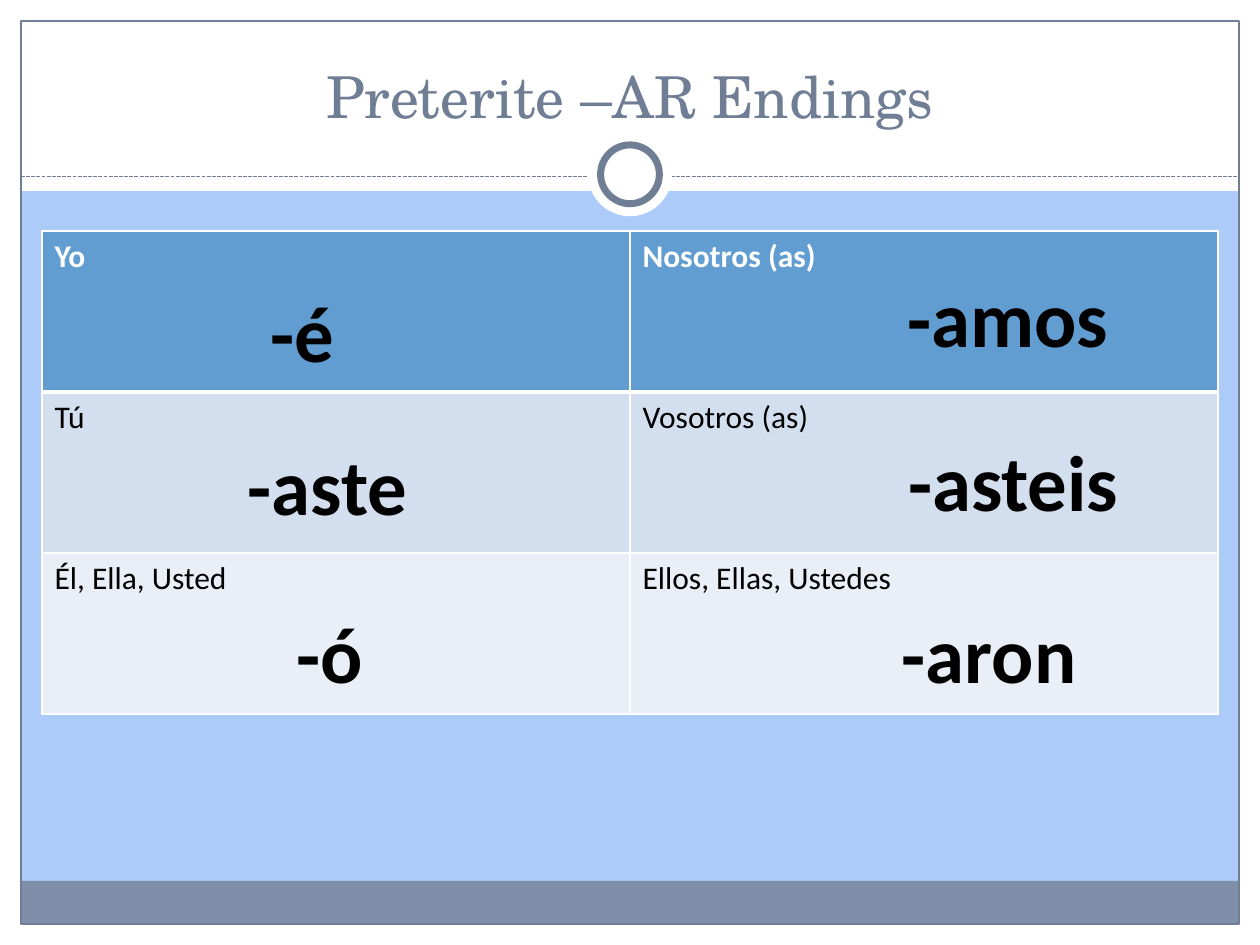
from lxml import etree
from pptx import Presentation
from pptx.dml.color import RGBColor
from pptx.enum.dml import MSO_LINE
from pptx.enum.shapes import MSO_CONNECTOR, MSO_SHAPE
from pptx.enum.text import MSO_ANCHOR, MSO_AUTO_SIZE, PP_ALIGN
from pptx.oxml.ns import qn
from pptx.util import Inches, Pt

RECT, OVAL = MSO_SHAPE.RECTANGLE, MSO_SHAPE.OVAL
LINE, DASH = MSO_CONNECTOR.STRAIGHT, MSO_LINE.SQUARE_DOT
LEFT, MID = PP_ALIGN.LEFT, PP_ALIGN.CENTER
LOW, TOP = MSO_ANCHOR.BOTTOM, MSO_ANCHOR.TOP
FIT, FIXED = MSO_AUTO_SIZE.SHAPE_TO_FIT_TEXT, MSO_AUTO_SIZE.NONE

HUES = {
    "sky": "ACCBF9", "white": "FFFFFF", "black": "000000",
    "slate": "707E95", "foot": "7F8FA9",
    "head": "629DD1", "odd": "D3DFEE", "even": "EAEFF7",
}
COLS, ROWS = 60, 45  # grid of the slide, six cells to the inch


def grid(*cells):
    return [Inches(cell / 6) for cell in cells]


def hue(name):
    return RGBColor.from_string(HUES[name])


def write(frame, text, size=18, font="Calibri", color="black", bold=False,
          align=LEFT):
    para = frame.paragraphs[0]
    para.alignment = align
    run = para.add_run()
    run.text = text
    run.font.size, run.font.name, run.font.bold = Pt(size), font, bold
    run.font.color.rgb = hue(color)


class Deck:
    def __init__(self):
        self.file = Presentation()
        self.file.slide_width, self.file.slide_height = grid(COLS, ROWS)
        self.slide = self.file.slides.add_slide(self.file.slide_layouts[5])
        self.shapes = self.slide.shapes
        back = self.slide.background.fill
        back.solid()
        back.fore_color.rgb = hue("sky")

    def shape(self, kind, box, fill=None, line=None, width=0.75):
        item = self.shapes.add_shape(kind, *grid(*box))
        item.shadow.inherit = False
        if fill:
            item.fill.solid()
            item.fill.fore_color.rgb = hue(fill)
        else:
            item.fill.background()
        if line:
            item.line.color.rgb = hue(line)
            item.line.width = Pt(width)
        else:
            item.line.fill.background()

    def rule(self, start, end):
        item = self.shapes.add_connector(LINE, *grid(*start, *end))
        item.line.color.rgb = hue("slate")
        item.line.width = Pt(0.75)
        item.line.dash_style = DASH
        etree.SubElement(item._element.spPr, qn("a:effectLst"))

    def title(self, text, box):
        item = self.shapes.title
        item.left, item.top, item.width, item.height = grid(*box)
        # Bring the title in front of the frame
        self.shapes._spTree.append(item._element)
        frame = item.text_frame
        frame.auto_size, frame.vertical_anchor = FIXED, LOW
        write(frame, text, size=33, font="TeX Gyre Schola", color="slate",
              align=MID)

    def edge(self, cell, widths):
        props = cell._tc.get_or_add_tcPr()
        for side, width in zip("LRTB", widths):
            line = etree.SubElement(props, qn("a:ln" + side), w=str(Pt(width)))
            fill = etree.SubElement(line, qn("a:solidFill"))
            etree.SubElement(fill, qn("a:srgbClr"), val=HUES["white"])

    def table(self, rows, fills, box):
        table = self.shapes.add_table(len(rows), len(rows[0]), *grid(*box)).table
        for r, (row, fill) in enumerate(zip(rows, fills)):
            for c, text in enumerate(row):
                cell = table.cell(r, c)
                self.edge(cell, (1, 1, 3 if r == 1 else 1, 3 if r == 0 else 1))
                cell.fill.solid()
                cell.fill.fore_color.rgb = hue(fill)
                cell.vertical_anchor = TOP
                write(cell.text_frame, text, bold=r == 0,
                      color="white" if r == 0 else "black")

    def label(self, text, left, top, width):
        item = self.shapes.add_textbox(*grid(left, top, width, 5.2))
        frame = item.text_frame
        frame.word_wrap, frame.auto_size = True, FIT
        write(frame, text, size=45, bold=True, align=MID)


def main():
    deck = Deck()

    # White margins, foot band and outline
    for box in ((0, 44, COLS, 1), (0, 0, COLS, 9.1),
                (0, 0, 1, ROWS), (59, 0, 1, ROWS)):
        deck.shape(RECT, box, fill="white")
    deck.shape(RECT, (1, 41.95, 58, 2.05), fill="foot")
    deck.shape(RECT, (1, 1, 58, 43), line="slate")

    # Dashed rule with the ring on it
    deck.rule((1, 8.4), (59, 8.4))
    deck.shape(OVAL, (28, 6.3, 4, 4), fill="white")
    deck.shape(OVAL, (28.6, 6.9, 2.8, 2.8), fill="white", line="slate", width=4)

    deck.title("Preterite –AR Endings", (2, 1.5, 56, 5))

    # Pronouns
    deck.table([("Yo", "Nosotros (as)"),
                ("Tú", "Vosotros (as)"),
                ("Él, Ella, Usted", "Ellos, Ellas, Ustedes")],
               ("head", "odd", "even"), (2, 11, 56, 23))

    # Endings: text, left, top, width
    for ending in (("-é", 8.8, 13.2, 11.2), ("-aste", 10, 20.5, 11.2),
                   ("-ó", 10.1, 28.5, 11.2), ("-amos", 40, 12.5, 16),
                   ("-asteis", 40.5, 20.3, 15.5), ("-aron", 41.5, 28.5, 11.2)):
        deck.label(*ending)

    deck.file.save("out.pptx")


if __name__ == "__main__":
    main()
